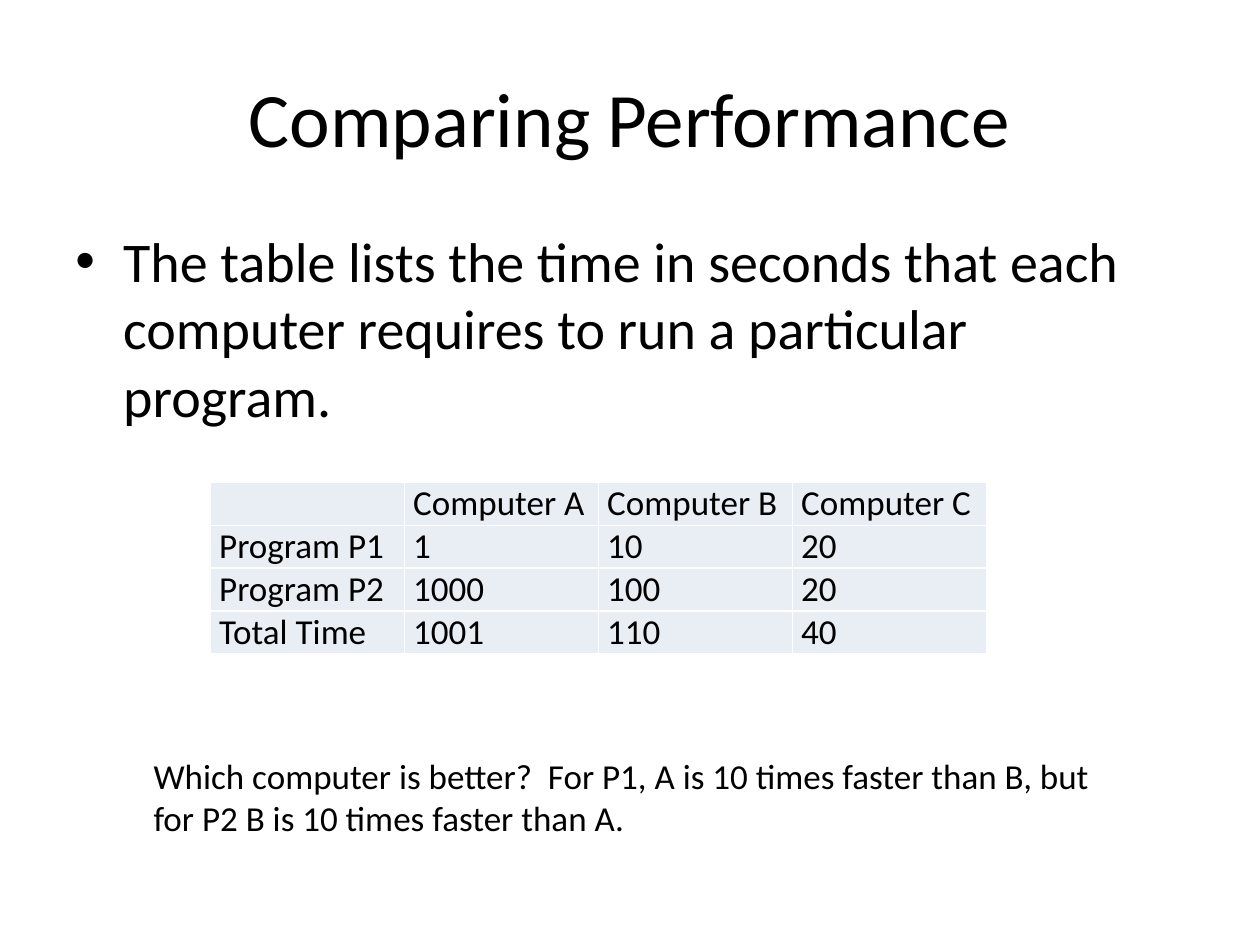
from lxml import etree
from pptx import Presentation
from pptx.dml.color import RGBColor
from pptx.enum.text import MSO_ANCHOR, PP_ALIGN
from pptx.oxml.ns import qn
from pptx.util import Inches, Pt

CENTER, LEFT = PP_ALIGN.CENTER, PP_ALIGN.LEFT
MIDDLE, TOP = MSO_ANCHOR.MIDDLE, MSO_ANCHOR.TOP

FONT, BLACK, WHITE, CELL_FILL = "Calibri", "000000", "FFFFFF", "E9EDF4"

TITLE = "Comparing Performance"
BULLET = ("The table lists the time in seconds that each computer requires "
          "to run a particular program.")
QUESTION = ("Which computer is better?  For P1, A is 10 times faster than B, "
            "but for P2 B is 10 times faster than A.")
TIMES = [
    ("", "Computer A", "Computer B", "Computer C"),
    ("Program P1", "1", "10", "20"),
    ("Program P2", "1000", "100", "20"),
    ("Total Time", "1001", "110", "40"),
]
TABLE_LEFT, TABLE_TOP = 1.67, 3.83
COLUMN_WIDTH, ROW_HEIGHT = 1.54, 0.34
CELL_FORMAT = {"margin_left": Inches(0.07), "margin_right": Inches(0.07),
               "margin_top": 0, "margin_bottom": 0}


def color(hex_value):
    return RGBColor.from_string(hex_value)


def write(paragraph, text, size):
    run = paragraph.add_run()
    run.text = text
    run.font.color.rgb = color(BLACK)
    for name, value in {"name": FONT, "size": Pt(size)}.items():
        setattr(run.font, name, value)


def add_text(slide, box, text, size, align=LEFT, anchor=TOP):
    frame = slide.shapes.add_textbox(*map(Inches, box)).text_frame
    for name, value in {"word_wrap": True, "vertical_anchor": anchor}.items():
        setattr(frame, name, value)
    paragraph = frame.paragraphs[0]
    paragraph.alignment = align
    write(paragraph, text, size)
    return paragraph


def add_bullet(paragraph, indent):
    properties = paragraph._p.get_or_add_pPr()
    properties.set("marL", str(Inches(indent)))
    properties.set("indent", str(-Inches(indent)))
    etree.SubElement(properties, qn("a:buFont"), typeface="Arial")
    etree.SubElement(properties, qn("a:buChar"), char="•")


def add_borders(cell, hex_value, width):
    properties = cell._tc.get_or_add_tcPr()
    for position, side in enumerate(("lnL", "lnR", "lnT", "lnB")):
        line = etree.Element(qn(f"a:{side}"), w=str(Pt(width)))
        fill = etree.SubElement(line, qn("a:solidFill"))
        etree.SubElement(fill, qn("a:srgbClr"), val=hex_value)
        properties.insert(position, line)


def add_times_table(slide):
    rows, columns = len(TIMES), len(TIMES[0])
    table = slide.shapes.add_table(
        rows, columns, Inches(TABLE_LEFT), Inches(TABLE_TOP),
        Inches(columns * COLUMN_WIDTH), Inches(rows * ROW_HEIGHT)).table
    table.first_row = table.horz_banding = False
    for row, texts in enumerate(TIMES):
        for column, text in enumerate(texts):
            cell = table.cell(row, column)
            for name, value in CELL_FORMAT.items():
                setattr(cell, name, value)
            cell.fill.solid()
            cell.fill.fore_color.rgb = color(CELL_FILL)
            add_borders(cell, WHITE, 1)
            if text:
                write(cell.text_frame.paragraphs[0], text, 20)


def main():
    presentation = Presentation()
    presentation.slide_width, presentation.slide_height = Inches(10), Inches(7.5)
    slide = presentation.slides.add_slide(presentation.slide_layouts[6])
    add_text(slide, (0.5, 0.3, 9, 1.25), TITLE, 44, CENTER, MIDDLE)
    bullet = add_text(slide, (0.5, 1.75, 9, 4.95), BULLET, 32)
    bullet.space_before = Pt(2)
    add_bullet(bullet, 0.38)
    add_times_table(slide)
    add_text(slide, (1.12, 5.94, 7.75, 0.77), QUESTION, 20)
    presentation.save("out.pptx")


if __name__ == "__main__":
    main()
